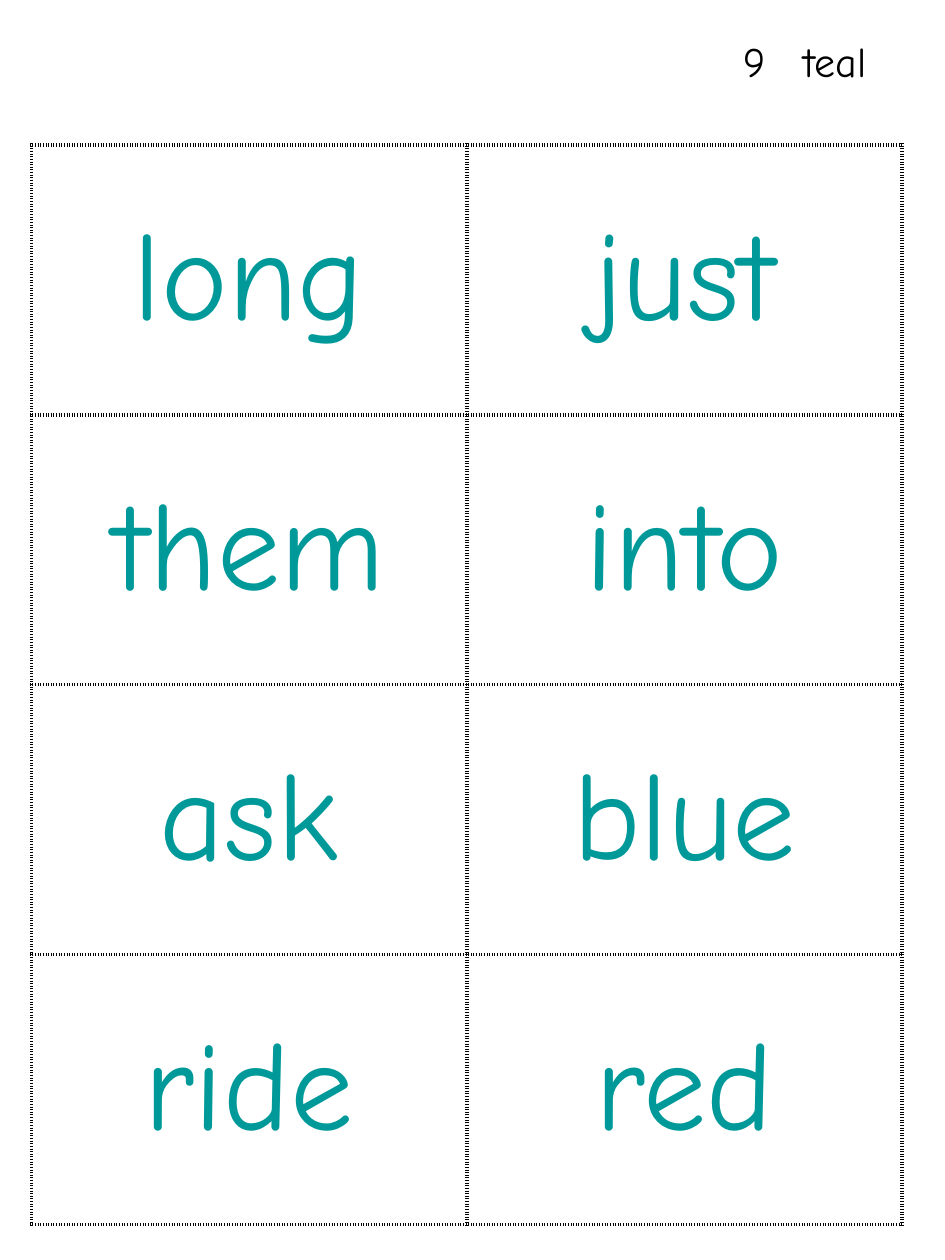
import pptx
import pptx.util
import pptx.dml.color
import pptx.enum.text
import lxml.etree

FONT = "Comic Neue"
TEAL = "009999"
BLACK = "000000"
WORDS = [
    ["long", "just"],
    ["them", "into"],
    ["ask", "blue"],
    ["ride", "red"],
]
CARD_W, CARD_H = 3.455, 2.1425
NS = "{http://schemas.openxmlformats.org/drawingml/2006/main}"
inch = pptx.util.Inches


def color(code):
    return pptx.dml.color.RGBColor.from_string(code)


def style(para, size, code):
    for run in para.runs:
        run.font.name = FONT
        run.font.size = pptx.util.Pt(size)
        run.font.color.rgb = color(code)


def add_edges(cell, width, code):
    """Draw a dotted line on all four sides of the cell."""
    props = cell._tc.get_or_add_tcPr()
    for side in ("lnL", "lnR", "lnT", "lnB"):
        line = lxml.etree.SubElement(props, NS + side, w=str(pptx.util.Pt(width)))
        fill = lxml.etree.SubElement(line, NS + "solidFill")
        lxml.etree.SubElement(fill, NS + "srgbClr", val=code)
        lxml.etree.SubElement(line, NS + "prstDash", val="sysDot")


def add_card(cell, word):
    cell.text_frame.text = word
    cell.vertical_anchor = pptx.enum.text.MSO_ANCHOR.MIDDLE
    para = cell.text_frame.paragraphs[0]
    para.alignment = pptx.enum.text.PP_ALIGN.CENTER
    style(para, 72, TEAL)
    add_edges(cell, 2.25, BLACK)
    cell.fill.background()


def add_cards(slide, left, top):
    rows, cols = len(WORDS), len(WORDS[0])
    table = slide.shapes.add_table(
        rows, cols, inch(left), inch(top), inch(cols * CARD_W), inch(rows * CARD_H)
    ).table
    table.first_row = table.horz_banding = False
    for r, line in enumerate(WORDS):
        for c, word in enumerate(line):
            add_card(table.cell(r, c), word)


def add_label(slide, text, left, top, width, height, tab):
    box = slide.shapes.add_textbox(inch(left), inch(top), inch(width), inch(height))
    frame = box.text_frame
    frame.word_wrap = True
    frame.text = text
    para = frame.paragraphs[0]
    style(para, 24, BLACK)
    stops = lxml.etree.SubElement(para._p.get_or_add_pPr(), NS + "tabLst")
    lxml.etree.SubElement(stops, NS + "tab", pos=str(inch(tab)), algn="l")


def main():
    deck = pptx.Presentation()
    deck.slide_width, deck.slide_height = inch(7.5), inch(10)
    slide = deck.slides.add_slide(deck.slide_layouts[6])
    add_cards(slide, 0.25, 1.15)
    add_label(slide, "9\tteal", 5.8, 0.23, 1.31, 0.5, tab=0.48)
    deck.save("out.pptx")


if __name__ == "__main__":
    main()
